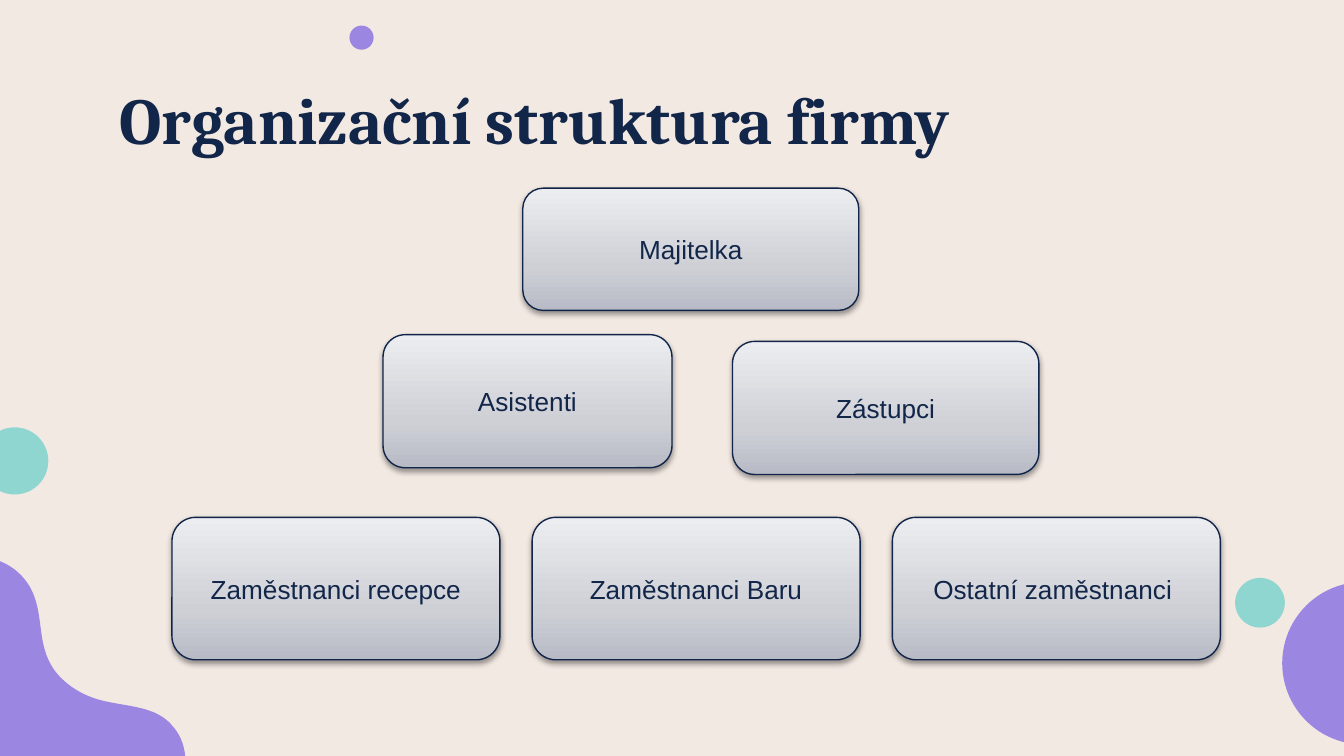
from lxml.etree import SubElement
from pptx import Presentation
from pptx.dml.color import RGBColor
from pptx.enum.shapes import MSO_SHAPE
from pptx.enum.text import MSO_ANCHOR, MSO_AUTO_SIZE, PP_ALIGN
from pptx.oxml.ns import qn
from pptx.util import Inches, Pt

COLORS = {
    "background": "F3E9E3", "violet": "9B86E2", "mint": "8FD5D0",
    "text": "122649", "outline": "102549", "shadow": "000000",
}
BOX_GRADIENT = [(0, "B8BBC6"), (35, "CED0D6"), (100, "ECEDF0")]

# Content
TITLE = "Organizační struktura firmy"
# Each level: top, height, left of the first box, gap, then (label, width)
LEVELS = [
    (1.40, 0.91, 3.89, 0, [("Majitelka", 2.50)]),
    (2.49, 0.99, 2.85, 0.45, [("Asistenti", 2.15), ("Zástupci", 2.28)]),
    (3.85, 1.06, 1.28, 0.24, [("Zaměstnanci recepce", 2.44),
                              ("Zaměstnanci Baru", 2.44),
                              ("Ostatní zaměstnanci ", 2.44)]),
]
LOWERED = {"Zástupci": 0.05}

# Decoration: left, top, diameter, colour
CIRCLES = [
    (2.60, 0.19, 0.18, "violet"), (9.19, 4.30, 0.37, "mint"),
    (-0.14, 3.18, 0.50, "mint"), (9.54, 4.33, 1.21, "violet"),
]
# Corner wave: start point, then Bezier segments and closing corners
WAVE_START = (1.38, 5.67)
WAVE_CURVES = [
    ((1.38, 5.59), (1.36, 5.49), (1.29, 5.41)),
    ((1.17, 5.25), (0.94, 5.26), (0.75, 5.21)),
    ((0.60, 5.17), (0.48, 5.09), (0.40, 4.98)),
    ((0.27, 4.79), (0.33, 4.57), (0.23, 4.38)),
    ((0.16, 4.25), (0.02, 4.15), (-0.14, 4.15)),
]
WAVE_CORNERS = [(-0.14, 5.73), (1.37, 5.73)]
CURVE_STEPS = 16


def rgb(name):
    return RGBColor.from_string(COLORS[name])


def write_text(frame, text, font="Arial", size=14, bold=False,
               align=PP_ALIGN.CENTER, anchor=MSO_ANCHOR.MIDDLE):
    frame.word_wrap = True
    frame.vertical_anchor = anchor
    paragraph = frame.paragraphs[0]
    paragraph.alignment = align
    run = paragraph.add_run()
    run.text = text
    run.font.name, run.font.size, run.font.bold = font, Pt(size), bold
    run.font.color.rgb = rgb("text")


def paint(shape, color):
    shape.shadow.inherit = False
    shape.fill.solid()
    shape.fill.fore_color.rgb = rgb(color)
    shape.line.fill.background()


def add_color(parent, value):
    return SubElement(parent, qn("a:srgbClr"), val=value)


def curve_points(start, curves):
    for first, second, end in curves:
        for step in range(1, CURVE_STEPS + 1):
            t = step / CURVE_STEPS
            u = 1 - t
            yield tuple(u**3 * a + 3 * u * u * t * b + 3 * u * t * t * c + t**3 * d
                        for a, b, c, d in zip(start, first, second, end))
        start = end


def add_wave(slide):
    outline = [WAVE_START, *curve_points(WAVE_START, WAVE_CURVES), *WAVE_CORNERS]
    points = [(Inches(x), Inches(y)) for x, y in outline]
    builder = slide.shapes.build_freeform(*points[0])
    builder.add_line_segments(points[1:])
    paint(builder.convert_to_shape(), "violet")


def add_box(slide, label, left, top, width, height):
    shape = slide.shapes.add_shape(MSO_SHAPE.ROUNDED_RECTANGLE, Inches(left),
                                   Inches(top), Inches(width), Inches(height))
    shape.fill.gradient()
    shape.fill.gradient_angle = 90
    shape.line.color.rgb = rgb("outline")
    shape.line.width = Pt(0.75)
    # Three gradient stops
    stops = shape.element.spPr.find(".//" + qn("a:gsLst"))
    for stop in list(stops):
        stops.remove(stop)
    for position, value in BOX_GRADIENT:
        add_color(SubElement(stops, qn("a:gs"), pos=str(position * 1000)), value)
    # Soft shadow below the box
    shape.shadow.inherit = False
    effects = shape.element.spPr.find(qn("a:effectLst"))
    shadow = SubElement(effects, qn("a:outerShdw"), blurRad=str(Pt(3.1)),
                        dist=str(Pt(1.6)), dir=str(90 * 60000), rotWithShape="0")
    SubElement(add_color(shadow, COLORS["shadow"]), qn("a:alpha"), val="38000")
    write_text(shape.text_frame, label)


def main():
    presentation = Presentation()
    presentation.slide_width = Inches(10)
    presentation.slide_height = presentation.slide_width * 9 // 16
    slide = presentation.slides.add_slide(presentation.slide_layouts[5])
    slide.background.fill.solid()
    slide.background.fill.fore_color.rgb = rgb("background")

    # Corner wave and circles
    add_wave(slide)
    for left, top, diameter, color in CIRCLES:
        paint(slide.shapes.add_shape(MSO_SHAPE.OVAL, Inches(left), Inches(top),
                                     Inches(diameter), Inches(diameter)), color)

    # Title
    title = slide.shapes.title
    title.left, title.top = Inches(0.79), Inches(0.49)
    title.width, title.height = Inches(7.23), Inches(0.74)
    frame = title.text_frame
    frame.auto_size = MSO_AUTO_SIZE.NONE
    frame.margin_left = frame.margin_right = Inches(0.1)
    frame.margin_top = frame.margin_bottom = Inches(0.1)
    write_text(frame, TITLE, font="Cambria", size=35, bold=True,
               align=PP_ALIGN.LEFT, anchor=MSO_ANCHOR.TOP)

    # Organisation levels
    for top, height, left, gap, boxes in LEVELS:
        for label, width in boxes:
            add_box(slide, label, left, top + LOWERED.get(label, 0), width, height)
            left += width + gap

    presentation.save("out.pptx")


if __name__ == "__main__":
    main()
